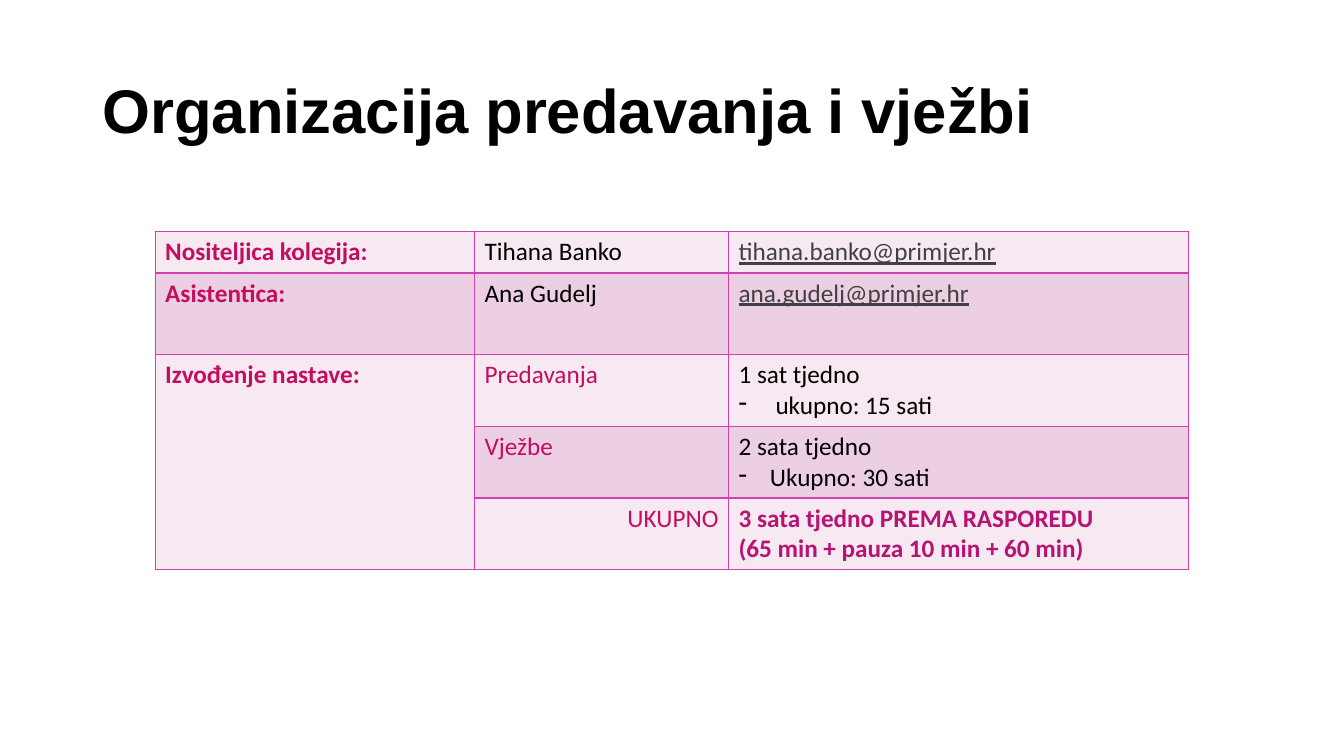
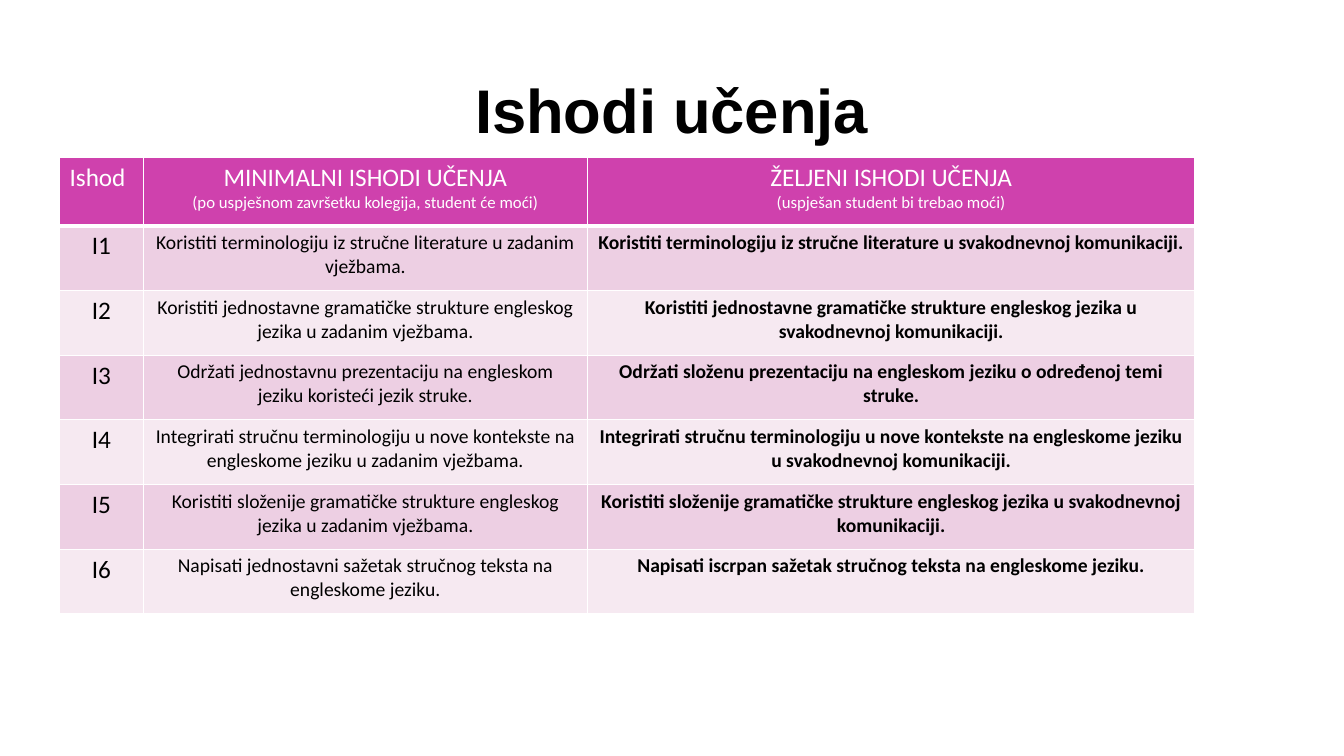
from dataclasses import dataclass

from lxml import etree
from pptx import Presentation
from pptx.dml.color import RGBColor
from pptx.enum import text as t
from pptx.oxml import ns
from pptx.util import Cm, Pt

BLACK = RGBColor(0x00, 0x00, 0x00)
WHITE = RGBColor(0xFF, 0xFF, 0xFF)
MAGENTA = RGBColor(0xCF, 0x41, 0xAD)
PALE = RGBColor(0xF6, 0xE9, 0xF1)
PINK = RGBColor(0xED, 0xCF, 0xE3)
CRIMSON = RGBColor(0xC3, 0x0E, 0x60)
PURPLE = RGBColor(0xB7, 0x13, 0x73)
LINK_GREY = RGBColor(0x41, 0x41, 0x41)

LEFT, CENTER, RIGHT = t.PP_ALIGN.LEFT, t.PP_ALIGN.CENTER, t.PP_ALIGN.RIGHT
TITLE_FONT = "Arial"
TABLE_FONT = "Calibri"
TITLE_ONLY = 5

OUTCOMES = [
    ("Koristiti terminologiju iz stručne literature u zadanim vježbama.",
     "Koristiti terminologiju iz stručne literature u svakodnevnoj komunikaciji."),
    ("Koristiti jednostavne gramatičke strukture engleskog jezika u zadanim vježbama.",
     "Koristiti jednostavne gramatičke strukture engleskog jezika u svakodnevnoj komunikaciji."),
    ("Održati jednostavnu prezentaciju na engleskom jeziku koristeći jezik struke.",
     "Održati složenu prezentaciju na engleskom jeziku o određenoj temi struke."),
    ("Integrirati stručnu terminologiju u nove kontekste na engleskome jeziku u zadanim vježbama.",
     "Integrirati stručnu terminologiju u nove kontekste na engleskome jeziku u svakodnevnoj komunikaciji."),
    ("Koristiti složenije gramatičke strukture engleskog jezika u zadanim vježbama.",
     "Koristiti složenije gramatičke strukture engleskog jezika u svakodnevnoj komunikaciji."),
    ("Napisati jednostavni sažetak stručnog teksta na engleskome jeziku.",
     "Napisati iscrpan sažetak stručnog teksta na engleskome jeziku."),
]


@dataclass
class Line:
    text: str
    color: RGBColor = BLACK
    size: float = 18
    bold: bool = False
    underline: bool = False
    align: t.PP_ALIGN = LEFT
    dash_indent: float = 0


def add_run(para, words, font, size, color, bold=False, underline=False):
    span = para.add_run()
    span.text = words
    span.font.name = font
    span.font.size = Pt(size)
    span.font.color.rgb = color
    span.font.bold = bold
    span.font.underline = underline


def add_titled_page(deck, title, align=LEFT):
    page = deck.slides.add_slide(deck.slide_layouts[TITLE_ONLY])
    box = page.shapes.title
    box.left, box.top, box.width, box.height = Cm(2.33), Cm(1.01), Cm(29.21), Cm(3.68)
    frame = box.text_frame
    frame.word_wrap = True
    frame.auto_size = t.MSO_AUTO_SIZE.NONE
    frame.vertical_anchor = t.MSO_ANCHOR.MIDDLE
    para = frame.paragraphs[0]
    para.alignment = align
    para.line_spacing = 0.9
    add_run(para, title, TITLE_FONT, 44, BLACK, bold=True)
    return page


def add_dash(para, indent):
    props = para._p.get_or_add_pPr()
    props.set("marL", str(Cm(indent)))
    props.set("indent", str(-Cm(indent)))
    etree.SubElement(props, ns.qn("a:buChar")).set("char", "-")


def set_borders(cell, color, bottom_width):
    props = cell._tc.get_or_add_tcPr()
    for side, width in (("L", 1), ("R", 1), ("T", 1), ("B", bottom_width)):
        edge = etree.SubElement(props, ns.qn("a:ln" + side), w=str(Pt(width)))
        fill = etree.SubElement(edge, ns.qn("a:solidFill"))
        etree.SubElement(fill, ns.qn("a:srgbClr"), val=str(color))


def write_cell(cell, lines):
    frame = cell.text_frame
    for index, line in enumerate(lines):
        para = frame.add_paragraph() if index else frame.paragraphs[0]
        if line.dash_indent:
            add_dash(para, line.dash_indent)
        para.alignment = line.align
        add_run(para, line.text, TABLE_FONT, line.size, line.color, line.bold, line.underline)


def add_grid(page, left, top, widths, heights, rows, fills, border, header=False):
    frame = page.shapes.add_table(len(heights), len(widths), Cm(left), Cm(top),
                                  Cm(sum(widths)), Cm(sum(heights)))
    table = frame.table
    table.first_row = header
    table.horz_banding = False
    for column, width in zip(table.columns, widths):
        column.width = Cm(width)
    for index, (row, height) in enumerate(zip(table.rows, heights)):
        row.height = Cm(height)
        for cell, lines in zip(row.cells, rows[index]):
            set_borders(cell, border, 3 if header and index == 0 else 1)
            cell.fill.solid()
            cell.fill.fore_color.rgb = fills[index]
            write_cell(cell, lines)
    return table


def label(words):
    return [Line(words, CRIMSON, bold=True)]


def mail(address):
    return [Line(address, LINK_GREY, underline=True)]


def add_organisation(deck):
    page = add_titled_page(deck, "Organizacija predavanja i vježbi")
    rows = [
        [label("Nositeljica kolegija:"), [Line("Tihana Banko")], mail("tihana.banko@primjer.hr")],
        [label("Asistentica:"), [Line("Ana Gudelj")], mail("ana.gudelj@primjer.hr")],
        [label("Izvođenje nastave:"), [Line("Predavanja", CRIMSON)],
         [Line("1 sat tjedno"), Line("ukupno: 15 sati", dash_indent=0.93)]],
        [[], [Line("Vježbe", CRIMSON)],
         [Line("2 sata tjedno"), Line("Ukupno: 30 sati", dash_indent=0.79)]],
        [[], [Line("UKUPNO", CRIMSON, align=RIGHT)],
         [Line("3 sata tjedno PREMA RASPOREDU", PURPLE, bold=True),
          Line("(65 min + pauza 10 min + 60 min)", PURPLE, bold=True)]],
    ]
    table = add_grid(page, 3.91, 5.84, [8.05, 6.4, 11.6], [1.04, 2.06] + [1.8] * 3, rows,
                     [PALE, PINK, PALE, PINK, PALE], MAGENTA)
    table.cell(2, 0).merge(table.cell(4, 0))
    table.cell(3, 0).fill.fore_color.rgb = PALE


def heading(words, note):
    return [Line(words, WHITE, align=CENTER), Line(note, WHITE, 12, align=CENTER)]


def add_outcomes(deck):
    page = add_titled_page(deck, "Ishodi učenja", CENTER)
    rows = [[
        [Line("Ishod", WHITE)],
        heading("MINIMALNI ISHODI UČENJA", "(po uspješnom završetku kolegija, student će moći)"),
        heading("ŽELJENI ISHODI UČENJA", "(uspješan student bi trebao moći)"),
    ]]
    for number, (minimal, desired) in enumerate(OUTCOMES, 1):
        rows.append([
            [Line(f"I{number}", align=CENTER)],
            [Line(minimal, size=14, align=CENTER)],
            [Line(desired, size=14, bold=True, align=CENTER)],
        ])
    add_grid(page, 1.5, 3.96, [2.11, 11.2, 15.3], [1.73] + [1.63] * len(OUTCOMES), rows,
             [MAGENTA] + [PINK, PALE] * 3, WHITE, header=True)


def main():
    deck = Presentation()
    deck.slide_width, deck.slide_height = Cm(33.87), Cm(19.05)
    add_organisation(deck)
    add_outcomes(deck)
    deck.save("out.pptx")


if __name__ == "__main__":
    main()
